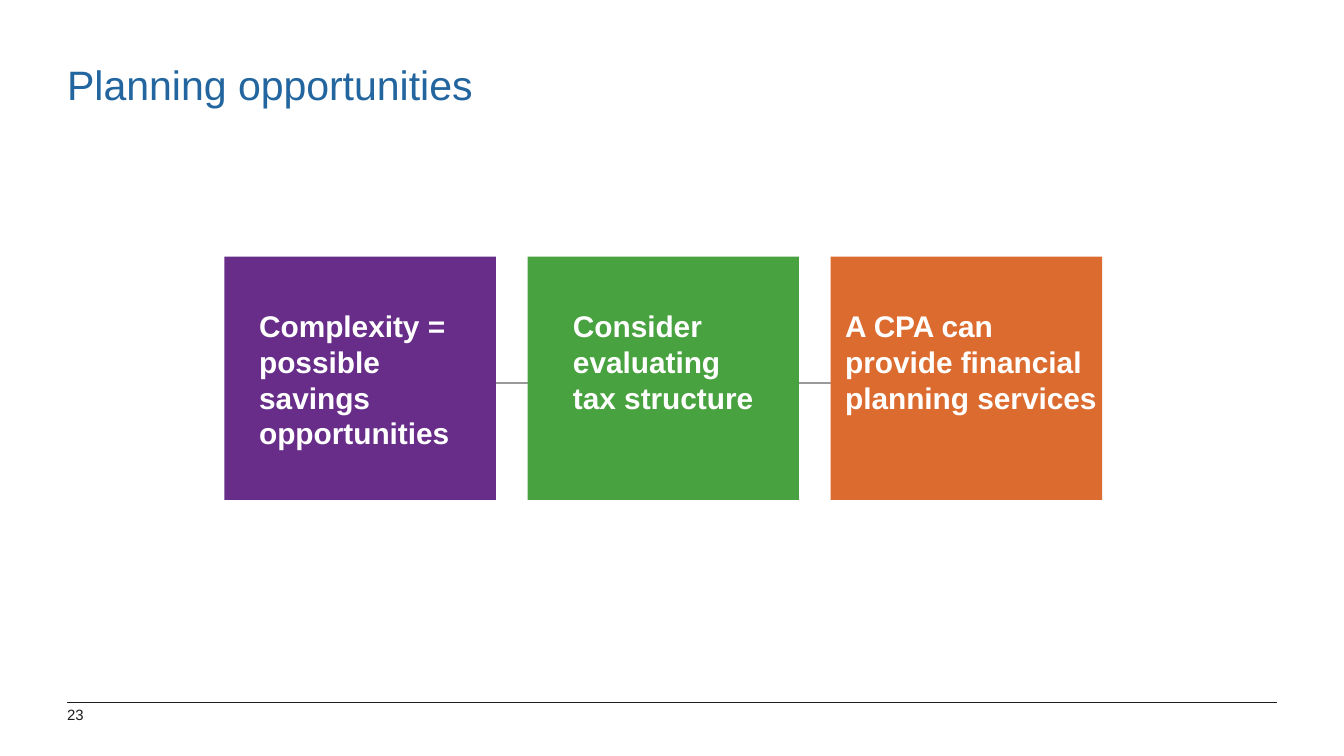
from pptx import Presentation
from pptx import util as u
from pptx.dml.color import RGBColor
from pptx.enum import shapes, text
from pptx.oxml.ns import qn
from lxml import etree

BLUE, INK, GREY, WHITE = "22659F", "1D1D1D", "999999", "FFFFFF"
CARD_WIDTH, CARD_STEP = 2.02, 2.255

# wording, fill, text offset from the card's left edge, text width and height
CARDS = [
    ("Complexity = possible savings opportunities", "672D89", 0.16, 1.79, 1.18),
    ("Consider evaluating tax structure", "48A23F", 0.24, 1.63, 0.91),
    ("A CPA can provide financial planning services", "DC6B2F", 0.01, 2.13, 0.91),
]


def colour(value):
    return RGBColor.from_string(value)


def add_text(page, wording, left, top, width, height, size, ink,
             bold=False, inset=(0, 0)):
    """Place one paragraph; inset is the (horizontal, vertical) margin."""
    box = page.shapes.add_textbox(*map(u.Inches, (left, top, width, height)))
    frame = box.text_frame
    frame.word_wrap = True
    frame.vertical_anchor = text.MSO_ANCHOR.TOP
    frame.margin_left = frame.margin_right = u.Inches(inset[0])
    frame.margin_top = frame.margin_bottom = u.Inches(inset[1])
    frame.text = wording
    font = frame.paragraphs[0].runs[0].font
    font.name, font.size, font.bold = "Arial", u.Pt(size), bold
    font.color.rgb = colour(ink)


def add_rule(page, left, right, y, ink, weight):
    line = page.shapes.add_connector(
        shapes.MSO_CONNECTOR.STRAIGHT, u.Inches(left), u.Inches(y),
        u.Inches(right), u.Inches(y))
    line.line.color.rgb = colour(ink)
    line.line.width = u.Pt(weight)
    etree.SubElement(line._element.spPr, qn("a:effectLst"))


def add_title(page, left, top, width, height):
    add_text(page, "Planning opportunities", left, top, width, height, 22, BLUE)


def add_cards(page, left, top, height):
    """Draw the row of cards over the line that links them."""
    add_rule(page, left + 0.73, left + 6.42, top + 0.94, GREY, 1)
    lefts = [left + index * CARD_STEP for index in range(len(CARDS))]
    for x, (_, fill, *_) in zip(lefts, CARDS):
        card = page.shapes.add_shape(
            shapes.MSO_SHAPE.RECTANGLE,
            *map(u.Inches, (x, top, CARD_WIDTH, height)))
        card.shadow.inherit = False
        card.fill.solid()
        card.fill.fore_color.rgb = colour(fill)
        card.line.fill.background()
    for x, (wording, _, offset, width, depth) in zip(lefts, CARDS):
        add_text(page, wording, x + offset, top + 0.33, width, depth,
                 16, WHITE, bold=True, inset=(0.1, 0.05))


def add_footer(page, left, top, width):
    add_rule(page, left, left + width, top, INK, 0.5)
    add_text(page, "23", left, top + 0.02, 0.36, 0.22, 8, INK)


def main():
    deck = Presentation()
    deck.slide_width = u.Inches(10)
    deck.slide_height = deck.slide_width * 9 // 16
    page = deck.slides.add_slide(deck.slide_layouts[6])
    add_footer(page, 0.5, 5.23, 9)
    add_title(page, 0.5, 0.44, 8.5, 0.47)
    add_cards(page, 1.67, 1.91, 1.81)
    deck.save("out.pptx")


if __name__ == "__main__":
    main()
